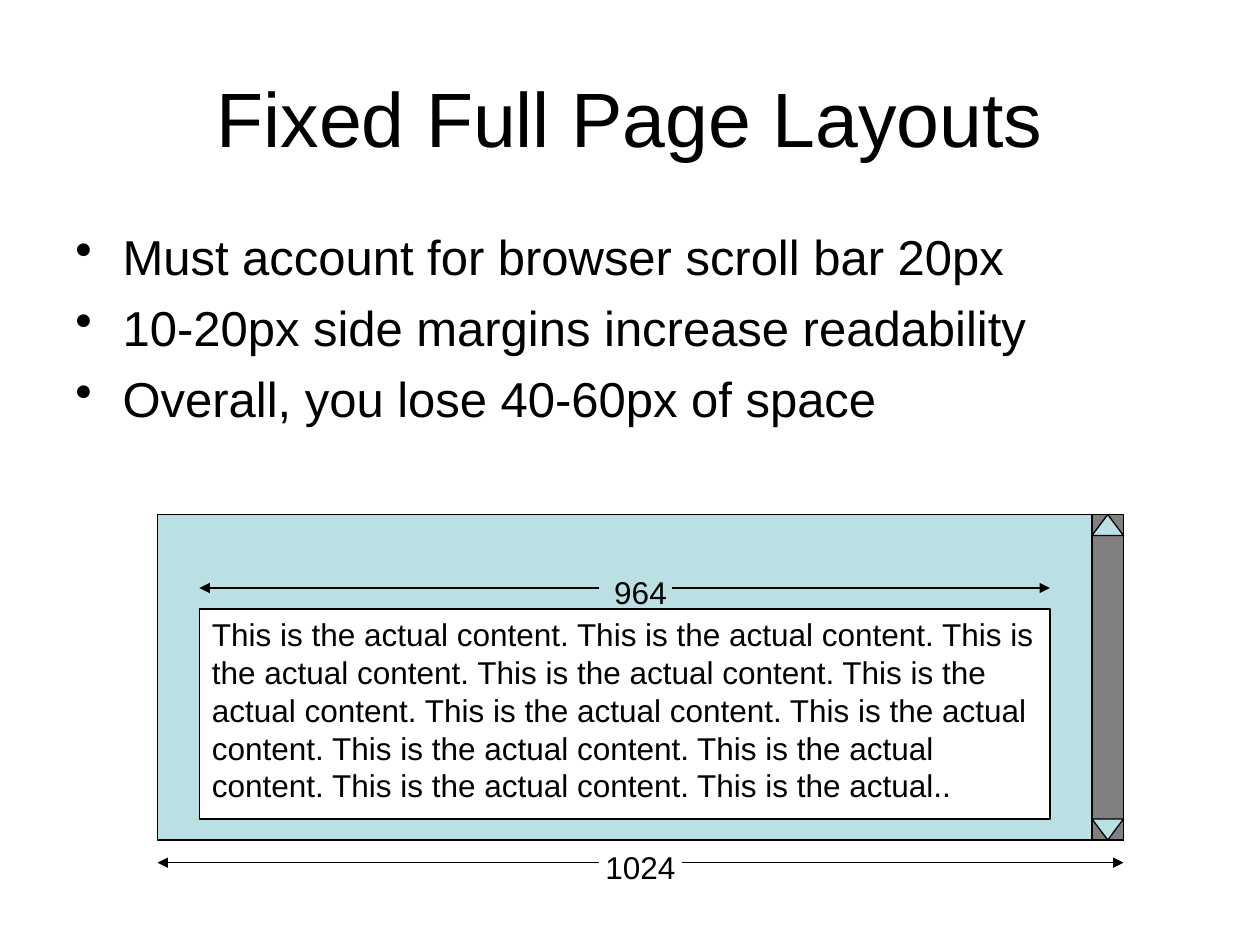
from dataclasses import dataclass

from lxml.etree import SubElement
from pptx import Presentation
from pptx.dml.color import RGBColor
from pptx.enum.shapes import MSO_CONNECTOR, MSO_SHAPE
from pptx.enum.text import MSO_ANCHOR, PP_ALIGN
from pptx.oxml.ns import qn
from pptx.util import Pt

BLACK = RGBColor(0, 0, 0)
WHITE = RGBColor(255, 255, 255)
AQUA = RGBColor(0xBB, 0xE0, 0xE3)
GRAY = RGBColor(0x80, 0x80, 0x80)


@dataclass
class Box:
    left: float
    top: float
    width: float
    height: float

    def pts(self) -> tuple:
        return Pt(self.left), Pt(self.top), Pt(self.width), Pt(self.height)


@dataclass
class Span:
    """A measure: a label between two arrows that point outwards."""
    text: str
    top: float      # top of the label
    line: float     # height of the arrows
    left: float
    right: float
    gap: tuple      # inner ends of the arrows


def draw_shape(slide, kind, box: Box, fill: RGBColor, turn: int = 0) -> None:
    shape = slide.shapes.add_shape(kind, *box.pts())
    shape.shadow.inherit = False
    shape.rotation = turn
    shape.fill.solid()
    shape.fill.fore_color.rgb = fill
    shape.line.color.rgb = BLACK
    shape.line.width = Pt(0.75)


def draw_text(slide, box: Box, lines: list, size: float, align=PP_ALIGN.LEFT,
              anchor=MSO_ANCHOR.TOP, after: float = 0, bullet: bool = False) -> None:
    frame = slide.shapes.add_textbox(*box.pts()).text_frame
    frame.word_wrap = True
    frame.vertical_anchor = anchor
    frame.text = "\n".join(lines)
    for para in frame.paragraphs:
        para.alignment = align
        para.space_after = Pt(after)
        para.font.name = "Arial"
        para.font.size = Pt(size)
        para.font.color.rgb = BLACK
        if bullet:
            props = para._p.get_or_add_pPr()
            props.set("marL", str(Pt(27)))
            props.set("indent", str(Pt(-27)))
            mark = props.makeelement(qn("a:buChar"), {"char": "•"})
            props.insert_element_before(mark, "a:tabLst", "a:defRPr", "a:extLst")


def draw_arrow(slide, start: float, end: float, y: float) -> None:
    arrow = slide.shapes.add_connector(
        MSO_CONNECTOR.STRAIGHT, Pt(start), Pt(y), Pt(end), Pt(y))
    arrow.line.color.rgb = BLACK
    arrow.line.width = Pt(0.75)
    SubElement(arrow.line._get_or_add_ln(), qn("a:tailEnd"), type="triangle")
    SubElement(arrow._element.spPr, qn("a:effectLst"))


def draw_span(slide, span: Span) -> None:
    draw_text(slide, Box(84, span.top, 564, 28.8), [span.text], 18, PP_ALIGN.CENTER)
    for start, end in zip(span.gap, (span.left, span.right)):
        draw_arrow(slide, start, end, span.line)


def main() -> None:
    deck = Presentation()
    deck.slide_width, deck.slide_height = Pt(720), Pt(540)
    slide = deck.slides.add_slide(deck.slide_layouts[6])

    # Title and bullets
    draw_text(slide, Box(36, 21.6, 648, 90), ["Fixed Full Page Layouts"], 44,
              PP_ALIGN.CENTER, MSO_ANCHOR.MIDDLE)
    draw_text(slide, Box(36, 126, 648, 356.4), [
        "Must account for browser scroll bar 20px",
        "10-20px side margins increase readability",
        "Overall, you lose 40-60px of space",
    ], 28, after=7, bullet=True)

    # Browser page with its full width
    page = Box(90, 294, 552, 186)
    draw_shape(slide, MSO_SHAPE.RECTANGLE, page, AQUA)
    draw_span(slide, Span("1024", 481, 493, 90, 642, (342, 390)))

    # Scroll bar
    wide, high = 18, 12
    left = page.left + page.width - wide
    foot = page.top + page.height - high
    draw_shape(slide, MSO_SHAPE.RECTANGLE, Box(left, page.top, wide, page.height), GRAY)
    for top, turn in ((page.top, 0), (foot, 180)):
        draw_shape(slide, MSO_SHAPE.ISOSCELES_TRIANGLE, Box(left, top, wide, high), AQUA, turn)

    # Content area with its width
    area = Box(114, 348, 486, 120)
    draw_shape(slide, MSO_SHAPE.RECTANGLE, area, WHITE)
    draw_span(slide, Span("964", 324, 336, 114, 600, (342, 384)))
    words = "This is the actual content. " * 10 + "This is the actual.."
    draw_text(slide, Box(area.left, area.top, area.width, 115.2), [words], 18)

    deck.save("out.pptx")


if __name__ == "__main__":
    main()
